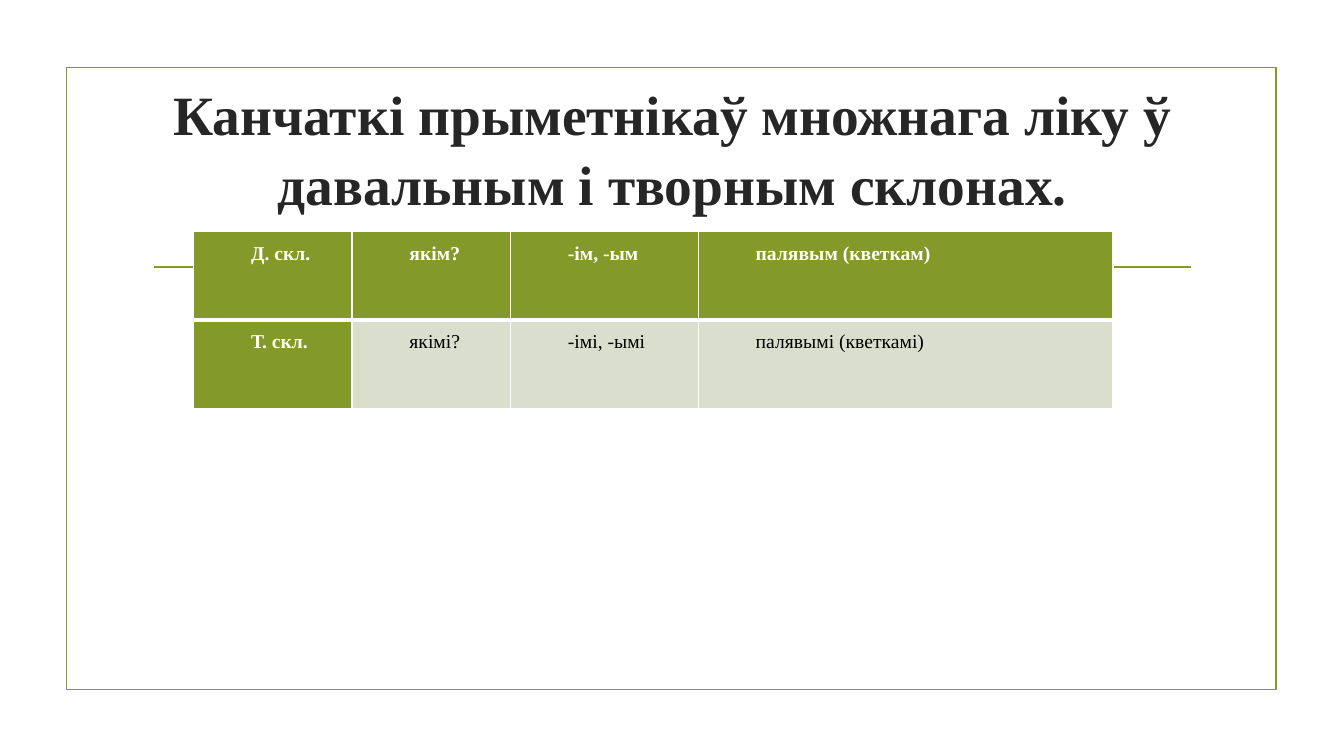
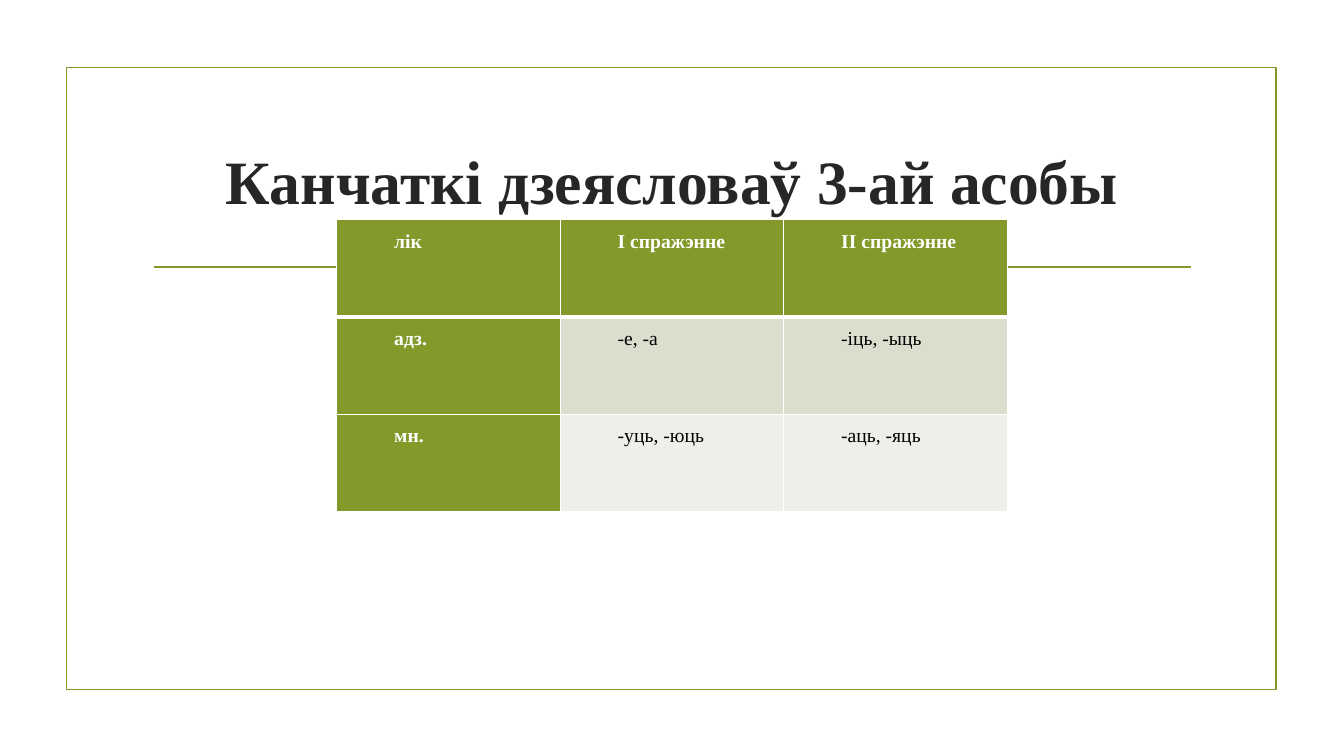
from dataclasses import dataclass
from lxml.etree import SubElement
from pptx import Presentation
from pptx.dml.color import RGBColor as Rgb
from pptx.enum.shapes import MSO_CONNECTOR as Conn, MSO_SHAPE as Kind
from pptx.enum.text import MSO_ANCHOR as Anchor, PP_ALIGN as Align
from pptx.oxml.ns import qn
from pptx.util import Inches, Pt


@dataclass(frozen=True)
class Theme:
    """Colours and type sizes of the deck."""
    green: str = "83992A"
    ink: str = "262626"
    white: str = "FFFFFF"
    black: str = "000000"
    bands: tuple = ("D9DECD", "EDEFE8")
    font: str = "Times New Roman"
    cell: float = 14
    line: float = 1.25
    thin: float = 1
    thick: float = 3


THEME = Theme()
FRAME = (0.66, 0.67, 12, 6.17)
TITLE = (1.42, 1.07, 10.5, 1.43)


def style(para, size, color, bold):
    """Set the font of a whole paragraph."""
    font = para.font
    font.name, font.size, font.bold = THEME.font, Pt(size), bold
    font.color.rgb = Rgb.from_string(color)


def stroke(line):
    """Give a line the deck's green stroke."""
    line.color.rgb = Rgb.from_string(THEME.green)
    line.width = Pt(THEME.line)


def add_frame(slide, box):
    """Draw the border and the rule under the title."""
    left, top, width, height = box
    frame = slide.shapes.add_shape(Kind.RECTANGLE, *map(Inches, box))
    frame.shadow.inherit = False
    frame.fill.background()
    stroke(frame.line)
    y = Inches(top + 1.98)
    rule = slide.shapes.add_connector(
        Conn.STRAIGHT, Inches(left + 0.87), y, Inches(left + width - 0.85), y)
    stroke(rule.line)
    SubElement(rule._element.spPr, qn("a:effectLst"))


def add_title(slide, box, text, size):
    """Write the centred title at the foot of its box."""
    frame = slide.shapes.add_textbox(*map(Inches, box)).text_frame
    frame.word_wrap = True
    frame.vertical_anchor = Anchor.BOTTOM
    frame.margin_bottom = Inches(0.35)
    para = frame.paragraphs[0]
    para.text = text
    para.alignment = Align.CENTER
    para.line_spacing = 1.05
    style(para, size, THEME.ink, True)


def set_edges(cell, foot):
    """Draw white borders, with the given width at the foot."""
    props = cell._tc.get_or_add_tcPr()
    for spot, side in enumerate(("lnL", "lnR", "lnT", "lnB")):
        width = foot if side == "lnB" else THEME.thin
        edge = props.makeelement(qn(f"a:{side}"), {"w": str(Pt(width))})
        fill = SubElement(edge, qn("a:solidFill"))
        SubElement(fill, qn("a:srgbClr"), val=THEME.white)
        props.insert(spot, edge)


def fill_cell(cell, text, row, col):
    """Write and colour one cell by its place in the table."""
    head = row == 0 or col == 0
    back = THEME.green if head else THEME.bands[(row - 1) % 2]
    cell.fill.solid()
    cell.fill.fore_color.rgb = Rgb.from_string(back)
    set_edges(cell, THEME.thin if row else THEME.thick)
    cell.margin_left = cell.margin_right = Inches(0.07)
    cell.margin_top = cell.margin_bottom = 0
    para = cell.text_frame.paragraphs[0]
    para.text = text
    para.line_spacing = 1.5
    props = para._p.get_or_add_pPr()
    props.set("marL", str(Inches(0.5)))
    props.set("indent", "0")
    style(para, THEME.cell, THEME.white if head else THEME.black, head)


def add_grid(slide, box, cols, rows):
    """Place a table whose columns share the box by weight."""
    left, top, width, height = box
    table = slide.shapes.add_table(
        len(rows), len(cols), *map(Inches, box)).table
    table.horz_banding = table.first_row = False
    for col, part in zip(table.columns, cols):
        col.width = Inches(width * part / sum(cols))
    for line in table.rows:
        line.height = Inches(height / len(rows))
    for row, texts in enumerate(rows):
        for col, text in enumerate(texts):
            fill_cell(table.cell(row, col), text, row, col)


def add_page(deck, title, size, box, cols, rows):
    """Build one slide with a framed title and a table."""
    slide = deck.slides.add_slide(deck.slide_layouts[6])
    add_frame(slide, FRAME)
    add_title(slide, TITLE, title, size)
    add_grid(slide, box, cols, rows)


def main():
    """Build and save the deck."""
    deck = Presentation()
    deck.slide_width, deck.slide_height = Inches(13.33), Inches(7.5)
    add_page(
        deck,
        "Канчаткі прыметнікаў множнага ліку ў давальным і творным склонах.",
        39.6, (1.92, 2.3, 9.12, 1.75), (1.57, 1.57, 1.86, 4.11),
        (("Д. скл.", "якім?", "-ім, -ым", "палявым (кветкам)"),
         ("Т. скл.", "якімі?", "-імі, -ымі", "палявымі (кветкамі)")))
    add_page(
        deck, "Канчаткі дзеясловаў 3-ай асобы",
        44, (3.34, 2.18, 6.65, 2.9), (1, 1, 1),
        (("лік", "I спражэнне", "II спражэнне"),
         ("адз.", "-е, -а", "-іць, -ыць"),
         ("мн.", "-уць, -юць", "-аць, -яць")))
    deck.save("out.pptx")


if __name__ == "__main__":
    main()
